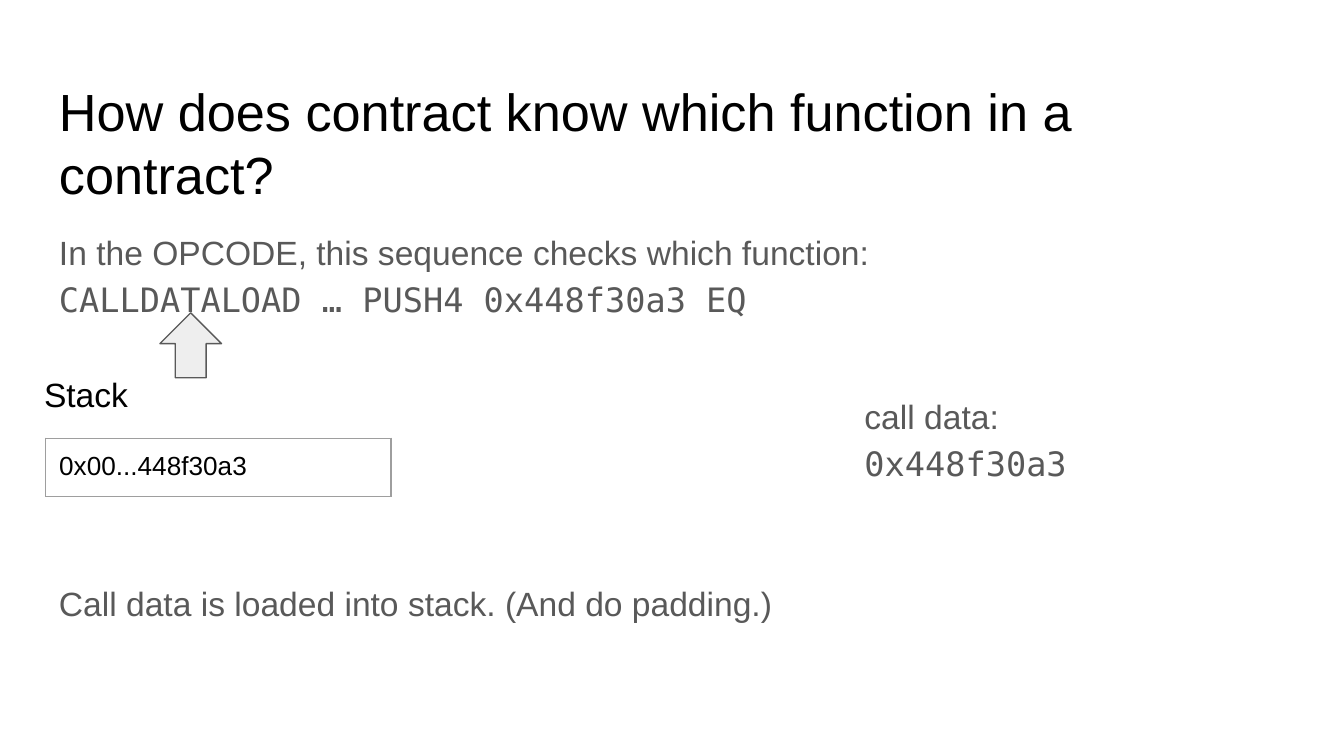
from lxml import etree
from pptx import Presentation
from pptx.dml.color import RGBColor
from pptx.enum.shapes import MSO_SHAPE as Preset
from pptx.enum.text import MSO_ANCHOR as Anchor
from pptx.oxml.ns import qn
from pptx.util import Pt

SANS, MONO = "Arial", "DejaVu Sans Mono"
BLACK, GREY, LIGHT, BORDER = "000000", "595959", "EEEEEE", "9E9E9E"
INSET = 7.2


def color(value):
    return RGBColor.from_string(value)


def write(frame, lines, size=18, fill=GREY, spacing=None):
    """Write (text, font) lines as one paragraph with line breaks."""
    frame.word_wrap = True
    frame.vertical_anchor = Anchor.TOP
    frame.margin_left = frame.margin_right = Pt(INSET)
    frame.margin_top = frame.margin_bottom = Pt(INSET)
    paragraph = frame.paragraphs[0]
    if spacing:
        paragraph.line_spacing = spacing
    for index, (text, font) in enumerate(lines):
        if index:
            paragraph.add_line_break()
        run = paragraph.add_run()
        run.text = text
        run.font.name = font
        run.font.size = Pt(size)
        run.font.color.rgb = color(fill)


def add_text(slide, box, lines, **text_format):
    shape = slide.shapes.add_textbox(*map(Pt, box))
    write(shape.text_frame, lines, **text_format)


def add_borders(cell, line_color, width):
    properties = cell._tc.get_or_add_tcPr()
    for index, side in enumerate(("lnL", "lnR", "lnT", "lnB")):
        line = etree.Element(qn(f"a:{side}"), w=str(Pt(width)))
        fill = etree.SubElement(line, qn("a:solidFill"))
        etree.SubElement(fill, qn("a:srgbClr"), val=line_color)
        properties.insert(index, line)


def add_explanation(slide, box):
    left, top, width, height = box
    # Opcode sequence
    add_text(slide, (left, top, width, 66), [
        ("In the OPCODE, this sequence checks which function:", SANS),
        ("CALLDATALOAD … PUSH4 0x448f30a3 EQ", MONO),
    ], spacing=1.15)
    # Closing remark
    add_text(slide, (left, top + height - 58, width, 58), [
        ("Call data is loaded into stack. (And do padding.)", SANS),
    ], spacing=1.15)


def add_stack(slide, box):
    left, top, width, height = box
    # Heading
    add_text(slide, (left, top, width, height - 31), [("Stack", SANS)], fill=BLACK)
    # Single stack slot
    slot = (left + 8, top + 41.8, width - 8, 30.24)
    table = slide.shapes.add_table(1, 1, *map(Pt, slot)).table
    table.first_row = table.horz_banding = False
    cell = table.cell(0, 0)
    cell.fill.background()
    write(cell.text_frame, [("0x00...448f30a3", SANS)], size=14, fill=BLACK)
    cell.margin_left = cell.margin_right = Pt(INSET)
    cell.margin_top = cell.margin_bottom = Pt(INSET)
    add_borders(cell, BORDER, 0.75)


def add_load_arrow(slide, box):
    arrow = slide.shapes.add_shape(Preset.UP_ARROW, *map(Pt, box))
    arrow.shadow.inherit = False
    arrow.fill.solid()
    arrow.fill.fore_color.rgb = color(LIGHT)
    arrow.line.color.rgb = color(GREY)
    arrow.line.width = Pt(0.75)


def main():
    presentation = Presentation()
    presentation.slide_width, presentation.slide_height = Pt(720), Pt(405)
    slide = presentation.slides.add_slide(presentation.slide_layouts[6])

    # Title
    add_text(slide, (24.5, 35.5, 671, 45.4), [
        ("How does contract know which function in a contract?", SANS),
    ], size=28, fill=BLACK)
    add_explanation(slide, (24.5, 114, 671, 246))
    add_stack(slide, (16.5, 193, 193, 74))
    # Call data
    add_text(slide, (456, 201.8, 145.4, 77.8), [
        ("call data:", SANS), ("0x448f30a3", MONO),
    ], spacing=1.15)
    add_load_arrow(slide, (85.7, 167.6, 33, 34.8))

    presentation.save("out.pptx")


if __name__ == "__main__":
    main()
